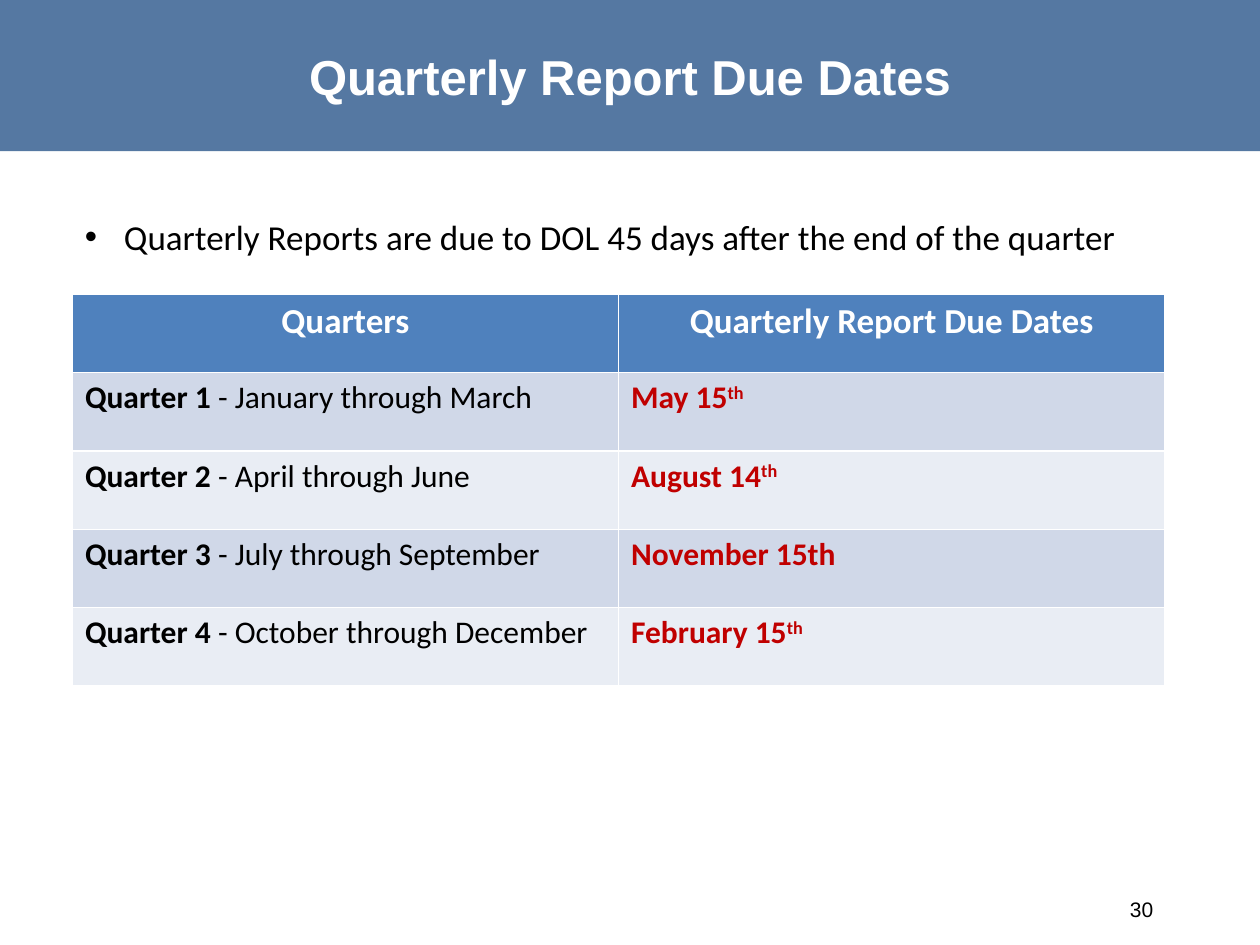
from lxml import etree
from pptx import Presentation
from pptx.dml.color import RGBColor
from pptx.enum.shapes import MSO_SHAPE
from pptx.enum.text import MSO_ANCHOR, PP_ALIGN
from pptx.oxml.ns import qn
from pptx.util import Cm, Pt

RECTANGLE = MSO_SHAPE.RECTANGLE
MIDDLE = MSO_ANCHOR.MIDDLE
LEFT, CENTER, RIGHT = PP_ALIGN.LEFT, PP_ALIGN.CENTER, PP_ALIGN.RIGHT

COLORS = {
    "banner": "5578A2",
    "header": "4F81BD",
    "odd_row": "D0D8E8",
    "even_row": "E9EDF4",
    "white": "FFFFFF",
    "black": "000000",
    "due_date": "C00000",
}
HEADINGS = ("Quarters", "Quarterly Report Due Dates")
QUARTERS = (
    ("Quarter 1 ", "- January through March", "May 15", "th"),
    ("Quarter 2 ", "- April through June", "August 14", "th"),
    ("Quarter 3 ", "- July through September", "November 15th", ""),
    ("Quarter 4 ", "- October through December", "February 15", "th"),
)


def color(name):
    """Return the named palette colour."""
    return RGBColor.from_string(COLORS[name])


def style(paragraph, font_name, size, color_name, bold=False, alignment=LEFT):
    """Set the font and alignment of a paragraph."""
    paragraph.alignment = alignment
    font = paragraph.font
    font.name, font.size, font.bold = font_name, Pt(size), bold
    font.color.rgb = color(color_name)


def add_banner(slide, left, top, width, height):
    """Draw the title band across the top."""
    banner = slide.shapes.add_shape(RECTANGLE, left, top, width, height)
    banner.shadow.inherit = False
    banner.fill.solid()
    banner.fill.fore_color.rgb = color("banner")
    banner.line.fill.background()
    banner.text_frame.vertical_anchor = MIDDLE
    paragraph = banner.text_frame.paragraphs[0]
    paragraph.text = "Quarterly Report Due Dates"
    style(paragraph, "Arial", 28, "white", True, CENTER)


def add_text(slide, left, top, width, height, text):
    """Add a wrapping text box and return its frame and paragraph."""
    frame = slide.shapes.add_textbox(left, top, width, height).text_frame
    frame.word_wrap = True
    paragraph = frame.paragraphs[0]
    paragraph.text = text
    return frame, paragraph


def add_bullet(slide, left, top, width, height):
    """Add the bulleted statement of the deadline rule."""
    text = "Quarterly Reports are due to DOL 45 days after the end of the quarter"
    _, paragraph = add_text(slide, left, top, width, height, text)
    properties = paragraph._p.get_or_add_pPr()
    indent = Cm(0.79)
    properties.set("marL", str(indent))
    properties.set("indent", str(-indent))
    etree.SubElement(properties, qn("a:buFont")).set("typeface", "Arial")
    etree.SubElement(properties, qn("a:buChar")).set("char", "•")
    style(paragraph, "Calibri", 20, "black")


def fill_cell(cell, fill_name, texts, size, color_name, alignment=LEFT):
    """Fill a cell with bold text and return its runs."""
    cell.fill.solid()
    cell.fill.fore_color.rgb = color(fill_name)
    paragraph = cell.text_frame.paragraphs[0]
    for text in filter(None, texts):
        paragraph.add_run().text = text
    style(paragraph, "Calibri", size, color_name, True, alignment)
    return paragraph.runs


def add_due_dates(slide, left, top, width, height):
    """Add the table of quarters and their due dates."""
    row_count = len(QUARTERS) + 1
    table = slide.shapes.add_table(
        row_count, len(HEADINGS), left, top, width, height).table
    for column, heading in enumerate(HEADINGS):
        fill_cell(table.cell(0, column), "header", [heading], 20, "white", CENTER)
    for row, (quarter, months, date, suffix) in enumerate(QUARTERS, start=1):
        band = "odd_row" if row % 2 else "even_row"
        runs = fill_cell(table.cell(row, 0), band, [quarter, months], 18, "black")
        runs[1].font.bold = False
        runs = fill_cell(table.cell(row, 1), band, [date, suffix], 18, "due_date")
        for run in runs[1:]:
            run.font._element.set("baseline", "30000")


def add_page_number(slide, left, top, width, height):
    """Add the page number at the lower right."""
    frame, paragraph = add_text(slide, left, top, width, height, "30")
    frame.vertical_anchor = MIDDLE
    style(paragraph, "Arial", 12, "black", alignment=RIGHT)


def main():
    """Build and save the slide."""
    presentation = Presentation()
    presentation.slide_width, presentation.slide_height = Cm(25.4), Cm(19.05)
    slide = presentation.slides.add_slide(presentation.slide_layouts[6])
    add_banner(slide, 0, 0, presentation.slide_width, Cm(3.05))
    add_due_dates(slide, Cm(1.46), Cm(5.93), Cm(22.02), Cm(7.9))
    add_page_number(slide, Cm(17.57), Cm(17.83), Cm(5.93), Cm(1.01))
    add_bullet(slide, Cm(1.46), Cm(4.22), Cm(22.02), Cm(1.11))
    presentation.save("out.pptx")


if __name__ == "__main__":
    main()
